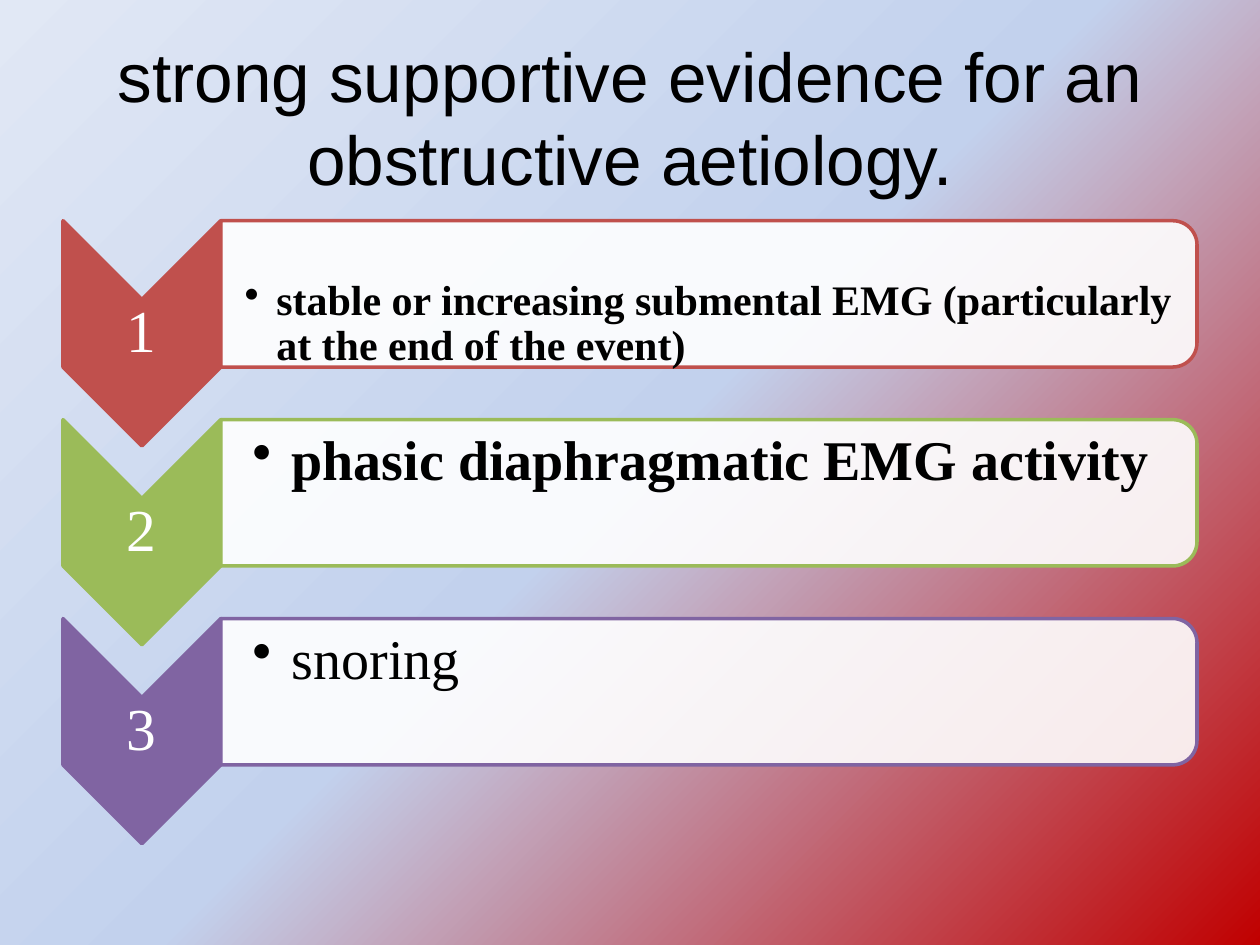
from dataclasses import dataclass

from lxml import etree
from pptx import Presentation
from pptx.dml.color import RGBColor
from pptx.enum import shapes, text
from pptx.oxml import parse_xml
from pptx.oxml.ns import nsdecls, qn
from pptx.util import Cm, Pt


@dataclass(frozen=True)
class Theme:
    red: str = "C0504D"
    green: str = "9BBB59"
    purple: str = "8064A2"
    white: str = "FFFFFF"
    black: str = "000000"
    backdrop: tuple = ((0, "C00000"), (50, "C2D1ED"), (100, "E1E8F5"))
    heading: str = "Arial"
    body: str = "Times New Roman"
    title_size: float = 39.6
    number_size: int = 34
    long_size: int = 24
    short_size: int = 32


THEME = Theme()


def set_background(s):
    """Radial gradient spreading from the bottom right corner."""
    stops = "".join(f'<a:gs pos="{pos * 1000}"><a:srgbClr val="{color}"/></a:gs>'
                    for pos, color in THEME.backdrop)
    s.background.fill.gradient()
    old = s._element.find(".//" + qn("a:gradFill"))
    old.getparent().replace(old, parse_xml(
        f'<a:gradFill {nsdecls("a")} rotWithShape="1"><a:gsLst>{stops}</a:gsLst>'
        '<a:path path="circle"><a:fillToRect l="100000" t="100000"/></a:path>'
        '</a:gradFill>'))


def add_text(s, box, words, font, size, color, bold=False, align=None,
             anchor=text.MSO_ANCHOR.MIDDLE, insets=(0.05, 0.05, 0.05, 0.05)):
    """Text box; box is left, top, width, height and insets start at the left."""
    tf = s.shapes.add_textbox(*map(Cm, box)).text_frame
    tf.word_wrap = True
    tf.vertical_anchor = anchor
    (tf.margin_left, tf.margin_top,
     tf.margin_right, tf.margin_bottom) = map(Cm, insets)
    tf.text = words
    p = tf.paragraphs[0]
    p.alignment = align
    f = p.runs[0].font
    f.name, f.size, f.bold = font, Pt(size), bold
    f.color.rgb = RGBColor.from_string(color)
    return p


def add_turned_shape(s, kind, box, fill, line, opacity=100):
    """Shape turned a quarter clockwise that fills the given box."""
    left, top, width, height = box
    shift = (width - height) / 2
    sp = s.shapes.add_shape(kind, Cm(left + shift), Cm(top - shift),
                            Cm(height), Cm(width))
    sp.rotation = 90
    sp.shadow.inherit = False
    sp.fill.solid()
    sp.fill.fore_color.rgb = RGBColor.from_string(fill)
    if opacity < 100:
        color = sp._element.spPr.find(".//" + qn("a:srgbClr"))
        etree.SubElement(color, qn("a:alpha"), val=str(opacity * 1000))
    sp.line.color.rgb = RGBColor.from_string(line)
    sp.line.width = Pt(2)


def add_bullet(p, indent):
    pPr = p._p.get_or_add_pPr()
    pPr.set("marL", str(Cm(indent)))
    pPr.set("indent", str(-Cm(indent)))
    etree.SubElement(pPr, qn("a:buChar"), char="•")


def add_title(s, box, words):
    add_text(s, box, words, THEME.heading, THEME.title_size, THEME.black,
             align=text.PP_ALIGN.CENTER, insets=(0.25, 0.13, 0.25, 0.13))


def add_step(s, box, number, words, color, size, bold, indent, text_top):
    """Numbered chevron with a bar of text to its right."""
    left, top, width, height = box
    chevron_w, bar_h = 3.18, 2.95
    bar_left, bar_w = left + chevron_w, width - chevron_w

    # Chevron and its number
    add_turned_shape(s, shapes.MSO_SHAPE.CHEVRON,
                     (left, top, chevron_w, height), color, color)
    p = add_text(s, (left, top + chevron_w / 2, chevron_w, height - chevron_w),
                 str(number), THEME.body, THEME.number_size, THEME.white,
                 align=text.PP_ALIGN.CENTER)
    p.line_spacing = 0.9

    # Bar and its bullet
    add_turned_shape(s, shapes.MSO_SHAPE.ROUND_2_SAME_RECTANGLE,
                     (bar_left, top, bar_w, bar_h), THEME.white, color, 90)
    p = add_text(s, (bar_left, top + 0.14, bar_w - 0.15, bar_h - 0.28),
                 words, THEME.body, size, THEME.black, bold,
                 anchor=text.MSO_ANCHOR.TOP,
                 insets=(size * 0.02, text_top, 0.05, 0.05))
    p.line_spacing = 0.9
    add_bullet(p, indent)


def main():
    prs = Presentation()
    prs.slide_width, prs.slide_height = Cm(25.4), Cm(19.05)
    s = prs.slides.add_slide(prs.slide_layouts[6])
    set_background(s)
    add_title(s, (1.27, 0.76, 22.86, 3.18),
              "strong supportive evidence for an obstructive aetiology.")

    # Steps: words, colour, size, bold, hanging indent, space above the text
    steps = [
        ("stable or increasing submental EMG (particularly at the end of the event)",
         THEME.red, THEME.long_size, True, 0.64, 1.04),
        ("phasic diaphragmatic EMG activity",
         THEME.green, THEME.short_size, True, 0.79, 0.12),
        ("snoring", THEME.purple, THEME.short_size, False, 0.79, 0.12),
    ]
    for i, (words, *style) in enumerate(steps):
        add_step(s, (1.27, 4.45 + 4.01 * i, 22.86, 4.54), i + 1, words, *style)

    prs.save("out.pptx")


if __name__ == "__main__":
    main()
